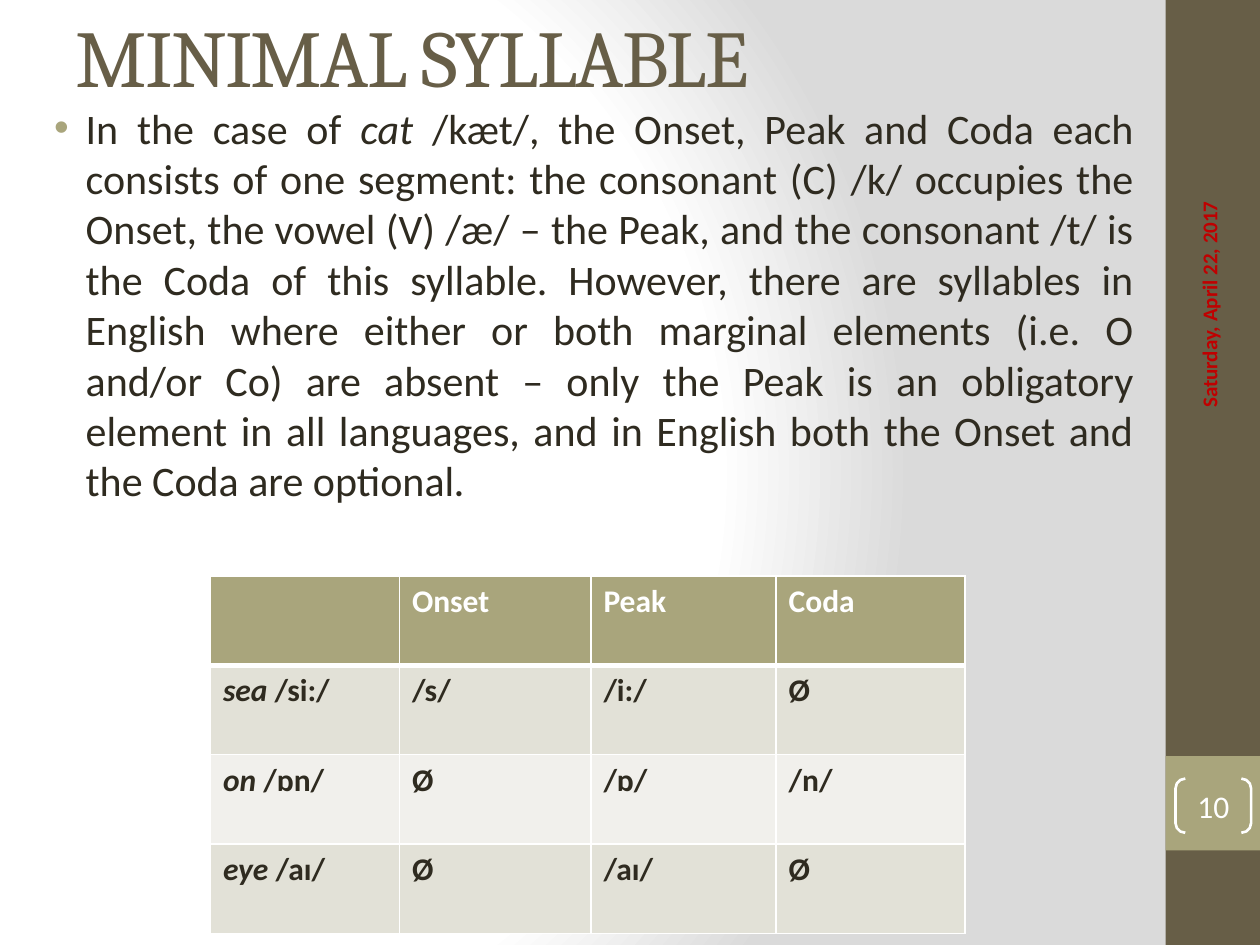
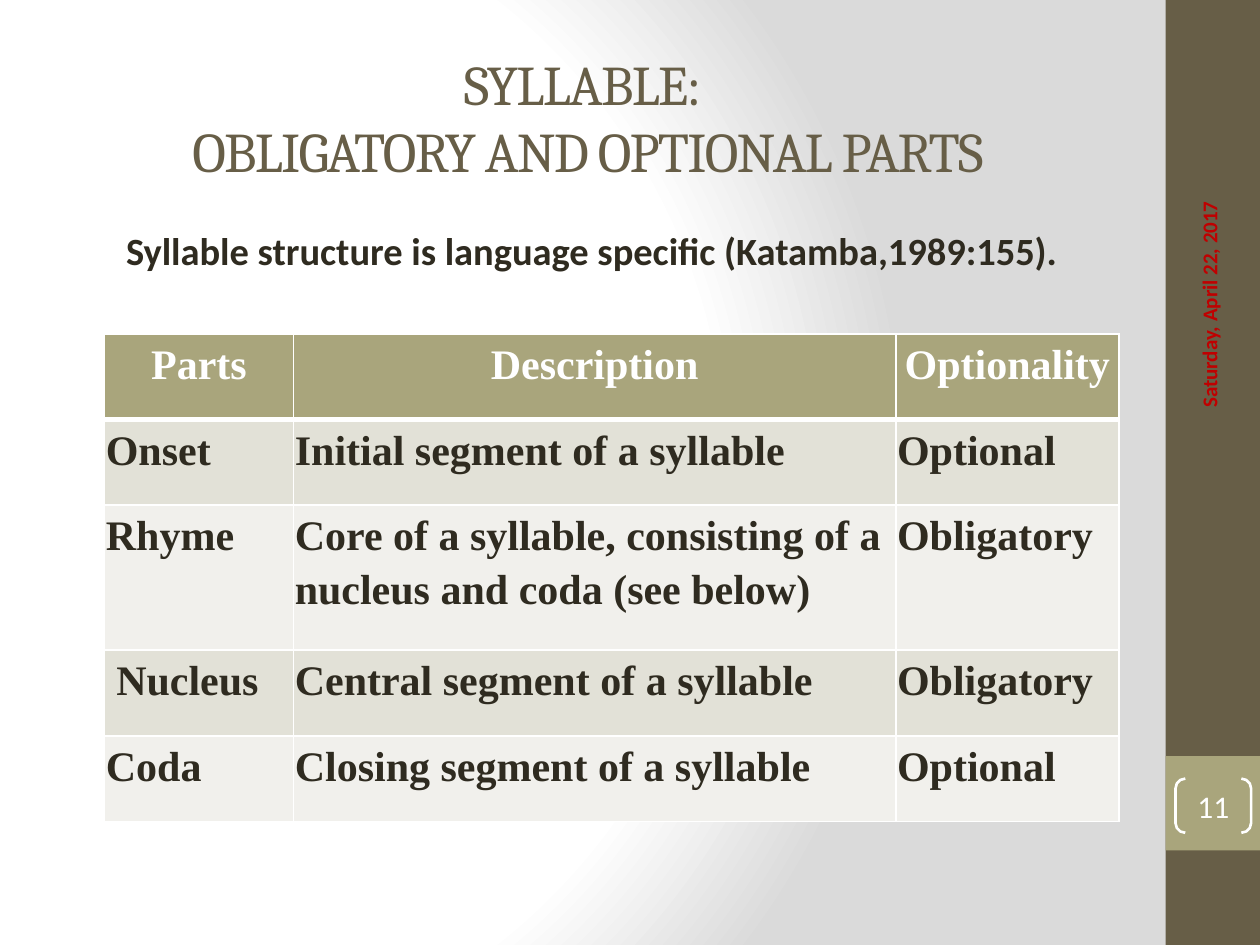
from dataclasses import dataclass, replace

from lxml import etree
from pptx import Presentation
from pptx.dml.color import RGBColor
from pptx.enum.shapes import MSO_SHAPE
from pptx.enum.text import MSO_ANCHOR, MSO_AUTO_SIZE, PP_ALIGN
from pptx.oxml import parse_xml
from pptx.oxml.ns import nsdecls, qn
from pptx.util import Inches, Pt

# Palette
BROWN = RGBColor(0x67, 0x5E, 0x47)
OLIVE = RGBColor(0xA9, 0xA5, 0x7C)
INK = RGBColor(0x2F, 0x2B, 0x20)
RED = RGBColor(0xC0, 0x00, 0x00)
WHITE = RGBColor(0xFF, 0xFF, 0xFF)
GREY = RGBColor(0xDA, 0xDA, 0xDA)
ROW_FILLS = (RGBColor(0xE2, 0xE1, 0xD7), RGBColor(0xF1, 0xF0, 0xEC))

LEFT, CENTER, JUSTIFY = PP_ALIGN.LEFT, PP_ALIGN.CENTER, PP_ALIGN.JUSTIFY
MIDDLE = MSO_ANCHOR.MIDDLE
NO_AUTOFIT = MSO_AUTO_SIZE.NONE
RECTANGLE, BRACKETS = MSO_SHAPE.RECTANGLE, MSO_SHAPE.DOUBLE_BRACKET

# The page is a grid of 10 columns by 7.5 rows with square units
COLUMNS, ROWS = 10, 7.5
UNIT = Inches(1)
BAND_LEFT, BAND_WIDTH = 9.25, 0.75
DATE = "Saturday, April 22, 2017"


@dataclass(frozen=True)
class TextStyle:
    size: float
    color: RGBColor = INK
    font: str = "Calibri"
    bold: bool = False
    italic: bool = False
    spacing: int = 0


TITLE = TextStyle(46, BROWN, "Cambria", spacing=-1)
BODY = TextStyle(24)
ITALIC = {"italic": True}


def grid(*units):
    return [int(unit * UNIT) for unit in units]


def add_spans(para, spans, style):
    """Add a string, or a list of (text, style changes), run by run."""
    if isinstance(spans, str):
        spans = [(spans, {})]
    for text, changes in spans:
        look = replace(style, **changes)
        span = para.add_run()
        span.text = text
        font = span.font
        font.name, font.size = look.font, Pt(look.size)
        font.bold, font.italic = look.bold, look.italic
        font.color.rgb = look.color
        if look.spacing:
            span._r.get_or_add_rPr().set("spc", str(look.spacing * 100))


def set_background(master):
    fill = master.background.fill
    fill.solid()
    stops = "".join(
        f'<a:gs pos="{share * 1000}"><a:srgbClr val="{color}"/></a:gs>'
        for share, color in ((0, WHITE), (75, WHITE), (100, GREY)))
    gradient = parse_xml(
        f'<a:gradFill {nsdecls("a")} rotWithShape="1"><a:gsLst>{stops}</a:gsLst>'
        '<a:path path="circle"><a:fillToRect l="20000" t="50000" r="100000" b="50000"/>'
        '</a:path></a:gradFill>')
    solid = master.element.find(".//" + qn("p:bgPr")).find(qn("a:solidFill"))
    solid.getparent().replace(solid, gradient)


def add_band(page, top, height, color):
    band = page.shapes.add_shape(
        RECTANGLE, *grid(BAND_LEFT, top, BAND_WIDTH, height))
    band.shadow.inherit = False
    band.fill.solid()
    band.fill.fore_color.rgb = color
    band.line.fill.background()
    return band


def move_to_master(master, shapes):
    tree = master.shapes._spTree
    for position, shape in enumerate(shapes, start=2):
        tree.insert(position, shape._element)


def add_date(page):
    box = page.shapes.add_textbox(*grid(8.26, 1.8, 2.67, 0.4))
    box.rotation = 270
    frame = box.text_frame
    frame.word_wrap = True
    frame.vertical_anchor = MIDDLE
    add_spans(frame.paragraphs[0], DATE, TextStyle(12, RED, bold=True))


def add_page_number(page, number):
    bracket = page.shapes.add_shape(BRACKETS, *grid(9.33, 6.18, 0.6, 0.43))
    bracket.adjustments[0] = 0.18
    bracket.shadow.inherit = False
    bracket.fill.background()
    bracket.line.color.rgb = WHITE
    bracket.line.width = Pt(1.5)
    frame = bracket.text_frame
    frame.margin_left = frame.margin_right = 0
    frame.margin_top = frame.margin_bottom = 0
    frame.vertical_anchor = MIDDLE
    para = frame.paragraphs[0]
    para.alignment = CENTER
    add_spans(para, str(number), TextStyle(18, WHITE))


def place(shape, area):
    shape.left, shape.top, shape.width, shape.height = grid(*area)
    shape.text_frame.auto_size = NO_AUTOFIT
    return shape.text_frame


def set_title(page, area, lines, size, alignment):
    frame = place(page.shapes.title, area)
    frame.vertical_anchor = MIDDLE
    para = frame.paragraphs[0]
    para.alignment = alignment
    for index, line in enumerate(lines):
        if index:
            para.add_line_break()
        add_spans(para, line, replace(TITLE, size=size))


def set_body(page, area, spans, style, margin, indent=0, bullet=None):
    para = place(page.placeholders[1], area).paragraphs[0]
    para.alignment = JUSTIFY
    properties = para._p.get_or_add_pPr()
    properties.set("marL", str(Inches(margin)))
    properties.set("indent", str(Inches(indent)))
    if bullet:
        color = etree.SubElement(properties, qn("a:buClr"))
        etree.SubElement(color, qn("a:srgbClr"), val=str(OLIVE))
        etree.SubElement(properties, qn("a:buChar"), char=bullet)
    else:
        etree.SubElement(properties, qn("a:buNone"))
    add_spans(para, spans, style)


def set_borders(cell, top, bottom):
    """White rules; top and bottom are widths in points."""
    properties = cell._tc.get_or_add_tcPr()
    widths = (("L", 1), ("R", 1), ("T", top), ("B", bottom))
    for position, (side, width) in enumerate(widths):
        properties.insert(position, parse_xml(
            f'<a:ln{side} {nsdecls("a")} w="{Pt(width)}"><a:solidFill>'
            f'<a:srgbClr val="{WHITE}"/></a:solidFill></a:ln{side}>'))


def add_table(page, corner, widths, heights, rows, style, tight=False):
    """Header row in olive, then striped rows; tight cells have thin margins."""
    area = grid(*corner, sum(widths), sum(heights))
    table = page.shapes.add_table(len(rows), len(widths), *area).table
    for column, width in zip(table.columns, grid(*widths)):
        column.width = width
    for row, height in zip(table.rows, grid(*heights)):
        row.height = height
    for row_index, row in enumerate(rows):
        header = row_index == 0
        for column_index, spans in enumerate(row):
            cell = table.cell(row_index, column_index)
            cell.fill.solid()
            cell.fill.fore_color.rgb = (
                OLIVE if header else ROW_FILLS[(row_index - 1) % 2])
            set_borders(cell, 3 if row_index == 1 else 1, 3 if header else 1)
            para = cell.text_frame.paragraphs[0]
            if tight:
                cell.margin_left = cell.margin_right = Inches(0.01)
                cell.margin_top = cell.margin_bottom = Inches(0.01)
                para.line_spacing = 1.15
                para.space_after = Pt(10)
                para.alignment = CENTER if header else LEFT
            if spans:
                add_spans(para, spans, replace(style, color=WHITE) if header else style)


def add_page(deck, number):
    page = deck.slides.add_slide(deck.slide_layouts[1])
    add_date(page)
    add_page_number(page, number)
    return page


def word(text, sounds):
    return [(text, ITALIC), (f" {sounds}", {})]


def build_minimal_syllable(page):
    set_title(page, (0.5, 0.05, 8.33, 0.77), ["MINIMAL SYLLABLE"], 46, LEFT)
    set_body(page, (0.2, 0.76, 8.9, 6.24), [
        ("In the case of ", {}),
        ("cat", ITALIC),
        (" /kæt/, the Onset, Peak and Coda each consists of one segment: "
         "the consonant (C) /k/ occupies the Onset, the vowel (V) /æ/ – the Peak, "
         "and the consonant /t/ is the Coda of this syllable. However, there are "
         "syllables in English where either or both marginal elements (i.e. O "
         "and/or Co) are absent – only the Peak is an obligatory element in all "
         "languages, and in English both the Onset and the Coda are optional", {}),
        (".", {"size": 20, "bold": True}),
    ], BODY, margin=0.38, indent=-0.25, bullet="•")
    rows = [
        ("", "Onset", "Peak", "Coda"),
        (word("sea", "/si:/"), "/s/", "/i:/", "Ø"),
        (word("on", "/ɒn/"), "Ø", "/ɒ/", "/n/"),
        (word("eye", "/aɪ/"), "Ø", "/aɪ/", "Ø"),
    ]
    add_table(page, (1.67, 4.57), (1.5, 1.52, 1.47, 1.5), [0.71] * len(rows),
              rows, TextStyle(18, bold=True))


def build_syllable_parts(page):
    set_title(page, (0.5, 0.3, 8.33, 1.25),
              ["SYLLABLE: ", "OBLIGATORY AND OPTIONAL PARTS"], 32, CENTER)
    set_body(page, (0.5, 1.75, 8.33, 5.25),
             "Syllable structure is language specific (Katamba,1989:155).",
             replace(BODY, size=22, bold=True), margin=0.4)
    rows = [
        ("Parts", "Description", "Optionality"),
        ("Onset", "Initial segment of a syllable", "Optional"),
        ("Rhyme", "Core of a syllable, consisting of a nucleus and coda (see below)",
         "Obligatory"),
        (" Nucleus", "Central segment of a syllable", "Obligatory"),
        ("Coda", "Closing segment of a syllable", "Optional"),
    ]
    add_table(page, (0.83, 2.65), (1.5, 4.78, 1.77), (0.68, 0.68, 1.15, 0.68, 0.68),
              rows, TextStyle(24, font="Times New Roman", bold=True), tight=True)


def main():
    deck = Presentation()
    deck.slide_width, deck.slide_height = grid(COLUMNS, ROWS)
    set_background(deck.slide_master)

    first = add_page(deck, 10)
    # Side bands are shared by every page through the master
    move_to_master(deck.slide_master, [
        add_band(first, 0, ROWS, BROWN),
        add_band(first, 6, BAND_WIDTH, OLIVE),
    ])
    build_minimal_syllable(first)
    build_syllable_parts(add_page(deck, 11))
    deck.save("out.pptx")


if __name__ == "__main__":
    main()
